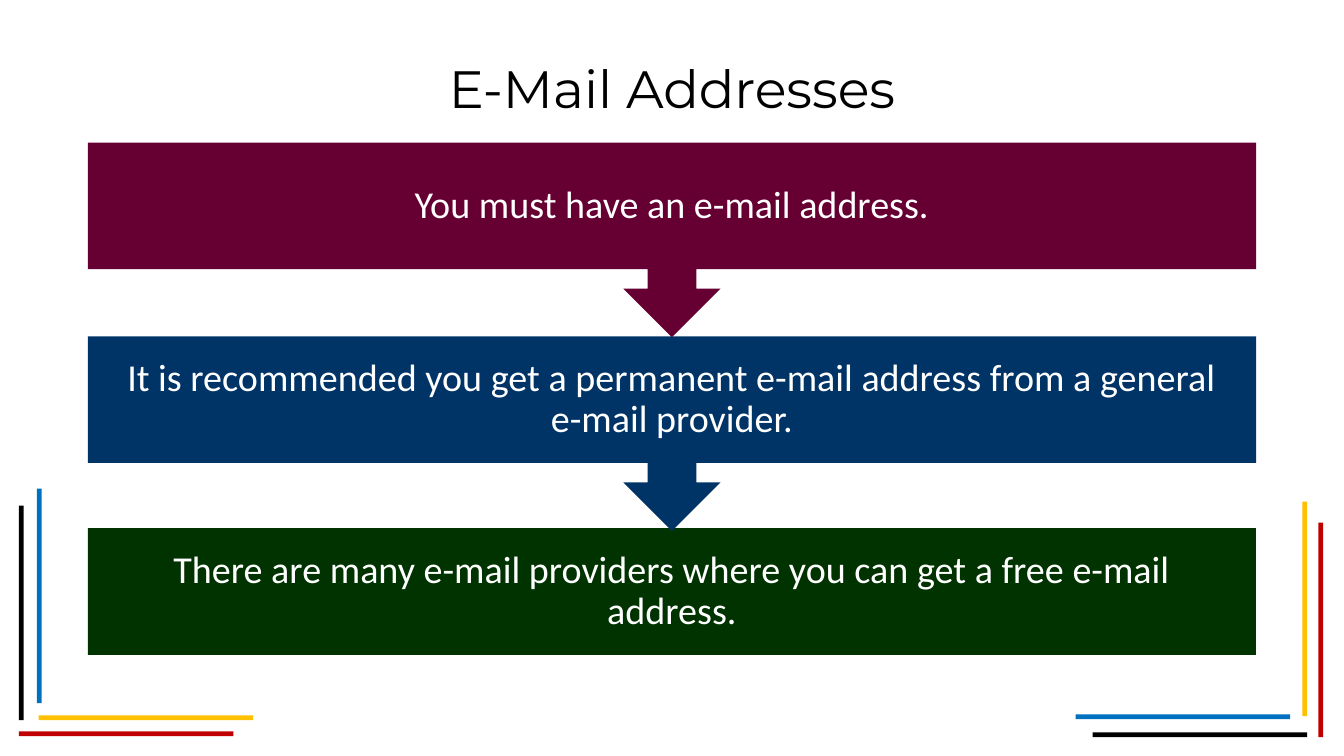
from pptx import Presentation
from pptx.dml.color import RGBColor
from pptx.enum import shapes, text
from pptx.util import Inches, Pt

BLACK = RGBColor(0x00, 0x00, 0x00)
WHITE = RGBColor(0xFF, 0xFF, 0xFF)
RED = RGBColor(0xC0, 0x00, 0x00)
YELLOW = RGBColor(0xFF, 0xC0, 0x00)
BLUE = RGBColor(0x00, 0x70, 0xC0)
MAROON = RGBColor(0x66, 0x00, 0x33)
NAVY = RGBColor(0x00, 0x33, 0x66)
GREEN = RGBColor(0x00, 0x33, 0x00)

RECT = shapes.MSO_SHAPE.RECTANGLE
CALLOUT = shapes.MSO_SHAPE.DOWN_ARROW_CALLOUT
BAR_LENGTH = 2.27
BAR_WIDTH = 0.05


def add_block(s, kind, left, top, width, height, color):
    sp = s.shapes.add_shape(kind, Inches(left), Inches(top), Inches(width), Inches(height))
    sp.shadow.inherit = False
    sp.fill.solid()
    sp.fill.fore_color.rgb = color
    sp.line.fill.background()
    return sp


def set_text(sp, words, font, size, color):
    tf = sp.text_frame
    tf.word_wrap = True
    tf.vertical_anchor = text.MSO_ANCHOR.MIDDLE
    p = tf.paragraphs[0]
    p.text = words
    p.alignment = text.PP_ALIGN.CENTER
    p.font.name = font
    p.font.size = Pt(size)
    p.font.color.rgb = color
    return tf


prs = Presentation()
prs.slide_width = Inches(14.22)
prs.slide_height = Inches(8)
s = prs.slides.add_slide(prs.slide_layouts[5])

upright_bars = [
    (0.2, 5.35, BLACK),
    (0.39, 5.17, BLUE),
    (13.95, 5.53, RED),
    (13.78, 5.31, YELLOW),
]
for left, top, color in upright_bars:
    add_block(s, RECT, left, top, BAR_WIDTH, BAR_LENGTH, color)

flat_bars = [
    (0.2, 7.74, RED),
    (0.41, 7.57, YELLOW),
    (11.56, 7.75, BLACK),
    (11.38, 7.56, BLUE),
]
for left, top, color in flat_bars:
    add_block(s, RECT, left, top, BAR_LENGTH, BAR_WIDTH, color)

title = s.shapes.title
title.left, title.top = Inches(1.11), Inches(0.3)
title.width, title.height = Inches(12), Inches(1.25)
set_text(title, "E-Mail Addresses", "Montserrat", 40, BLACK)

steps = [
    (RECT, 5.59, 1.34, GREEN,
     "There are many e-mail providers where you can get a free e-mail address."),
    (CALLOUT, 3.56, 2.06, NAVY,
     "It is recommended you get a permanent e-mail address from a general e-mail provider."),
    (CALLOUT, 1.51, 2.06, MAROON, "You must have an e-mail address."),
]
for kind, top, height, color, words in steps:
    sp = add_block(s, kind, 0.93, top, 12.36, height, color)
    tf = set_text(sp, words, "Calibri", 29, WHITE)
    tf.margin_left = tf.margin_right = tf.margin_top = tf.margin_bottom = Inches(0.23)
    tf.paragraphs[0].line_spacing = 0.9

prs.save("out.pptx")
